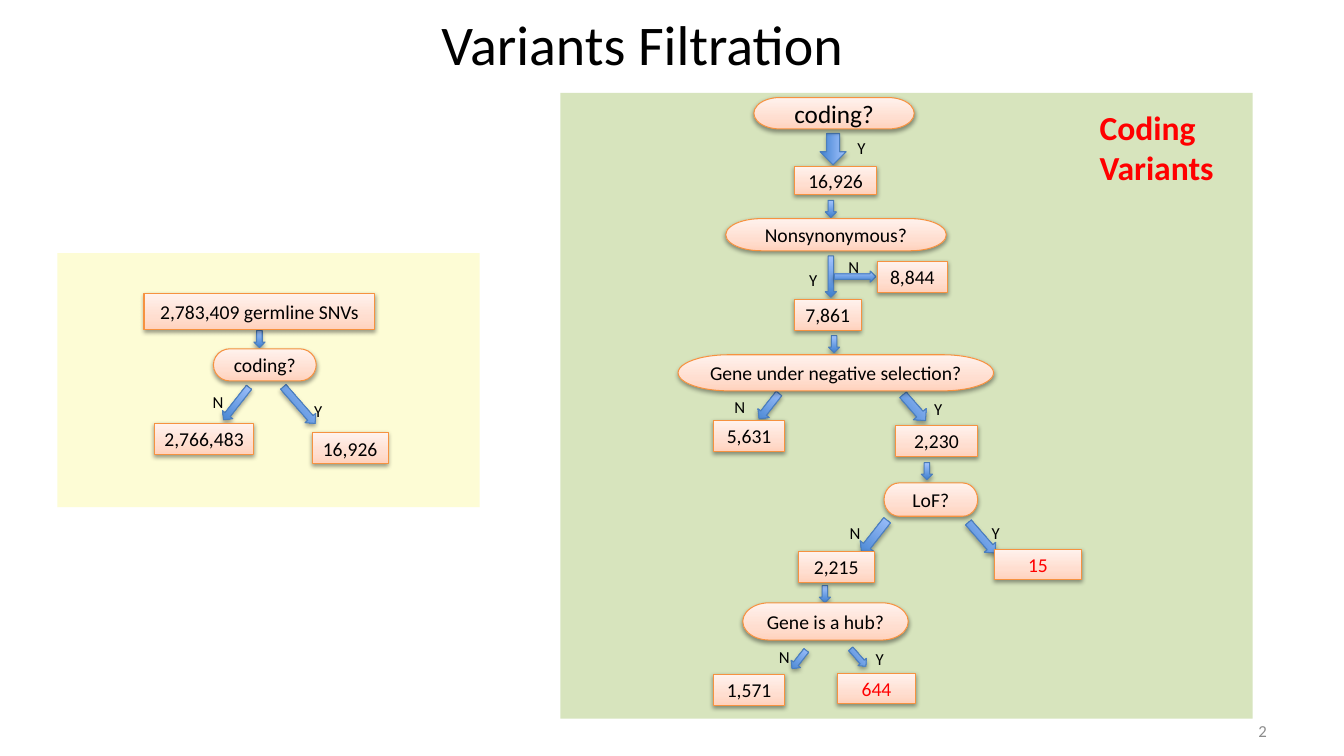
"""Build the variants filtration slide."""
from copy import deepcopy
from dataclasses import dataclass
from typing import NamedTuple

from lxml import etree
from pptx import Presentation
from pptx import util as u
from pptx.dml.color import RGBColor
from pptx.enum import shapes, text
from pptx.oxml import ns

Kind = shapes.MSO_SHAPE
Side = text.PP_ALIGN
Hold = text.MSO_ANCHOR


class Glow(NamedTuple):
    fill: tuple[tuple[float, str], ...]
    line: str
    dark: int
    drop: int


@dataclass(frozen=True)
class Theme:
    font: str = "Calibri"
    black: str = "000000"
    red: str = "FF0000"
    grey: str = "8C8C8C"
    cream: str = "FDFCD5"
    green: str = "D7E4BD"
    title: int = 40
    head: int = 24
    large: int = 18
    body: int = 14
    small: int = 12
    peach: Glow = Glow(((0, "FFD2BD"), (0.35, "FFDED0"), (1, "FFF2ED")), "F69240", 38, 20000)
    blue: Glow = Glow(((0, "3F80CE"), (1, "A4C4FF")), "4B7EBC", 35, 23000)


LOOK = Theme()


class Area(NamedTuple):
    x: float
    y: float
    w: float
    h: float

    def spots(self) -> list[u.Cm]:
        return [u.Cm(v) for v in self]


class Node(NamedTuple):
    words: str
    area: Area
    kind: Kind = Kind.FLOWCHART_PROCESS
    color: str = LOOK.black
    size: int = LOOK.body


class Arrow(NamedTuple):
    area: Area
    kind: Kind = Kind.DOWN_ARROW
    turn: float = 0


class Note(NamedTuple):
    words: str
    area: Area
    size: int = LOOK.small
    color: str = LOOK.black
    bold: bool = False
    side: Side = Side.LEFT
    hold: Hold = Hold.TOP


ROUND = Kind.FLOWCHART_TERMINATOR
RIGHT = Kind.RIGHT_ARROW

PANELS = [
    (Area(1.45, 6.38, 10.64, 6.4), LOOK.cream),
    (Area(14.12, 2.34, 17.45, 15.77), LOOK.green),
]

NODES = [
    Node("2,783,409 germline SNVs", Area(3.63, 7.39, 5.82, 0.91)),
    Node("coding?", Area(5.38, 8.79, 2.59, 0.81), ROUND),
    Node("2,766,483", Area(3.89, 10.67, 2.51, 0.79)),
    Node("16,926", Area(7.87, 10.9, 1.91, 0.79)),
    Node("coding?", Area(19, 2.46, 4.04, 0.79), ROUND, size=LOOK.large),
    Node("16,926", Area(20.02, 4.19, 2.08, 0.71)),
    Node("Nonsynonymous?", Area(18.29, 5.51, 5.56, 0.81), ROUND),
    Node("8,844", Area(22.12, 6.58, 1.75, 0.79)),
    Node("7,861", Area(20.02, 7.54, 1.68, 0.79)),
    Node("Gene under negative selection?", Area(17.09, 8.94, 7.95, 0.91), ROUND),
    Node("5,631", Area(17.98, 10.59, 1.8, 0.79)),
    Node("2,230", Area(22.56, 10.72, 2.08, 0.79)),
    Node("LoF?", Area(22.28, 12.17, 2.36, 0.84), ROUND),
    Node("2,215", Area(20.12, 13.89, 1.91, 0.79)),
    Node("15", Area(25.07, 13.84, 2.18, 0.76), color=LOOK.red),
    Node("Gene is a hub?", Area(18.72, 15.19, 4.17, 0.94), ROUND),
    Node("1,571", Area(17.98, 16.99, 1.8, 0.79)),
    Node("644", Area(21.11, 16.97, 1.96, 0.76), color=LOOK.red),
]

STEPS = [(6.4, 8.33), (20.8, 5.05), (20.88, 8.46), (23.22, 11.66), (20.65, 14.76)]
LEFTS = [
    Area(5.79, 9.65, 0.33, 1.04),
    Area(19.2, 9.83, 0.36, 0.81),
    Area(21.82, 13, 0.43, 1.04),
    Area(19.99, 16.33, 0.3, 0.58),
]
RIGHTS = [
    Area(6.93, 10.03, 1.22, 0.36),
    Area(22.61, 10.06, 0.86, 0.43),
    Area(24.23, 13.36, 1.02, 0.38),
    Area(21.34, 16.43, 0.58, 0.28),
]
ARROWS = [
    *(Arrow(Area(x, y, 0.28, 0.43)) for x, y in STEPS),
    *(Arrow(area, turn=38.1) for area in LEFTS),
    *(Arrow(area, RIGHT, 48.9) for area in RIGHTS),
    Arrow(Area(20.8, 6.45, 0.28, 1.04)),
    Arrow(Area(21.03, 6.83, 1.04, 0.28), RIGHT),
    Arrow(Area(20.6, 3.43, 0.79, 0.66), RIGHT, 90),
]

MARKS = {
    "N": [(5.11, 9.75), (21.13, 6.35), (18.26, 9.88), (21.16, 13.06), (19.38, 16.18)],
    "Y": [(7.67, 9.98), (21.36, 3.35), (20.14, 6.68), (23.29, 9.93), (24.74, 13.06),
          (21.82, 16.23)],
}
NOTES = [
    *(Note(mark, Area(x, y, 0.66, 0.76)) for mark, spots in MARKS.items() for x, y in spots),
    Note("Coding Variants", Area(27.46, 2.57, 4.06, 2.31), LOOK.head, LOOK.red, True),
    Note("2", Area(24.28, 17.91, 7.9, 1.02), color=LOOK.grey, side=Side.RIGHT,
         hold=Hold.MIDDLE),
]


def write(frame, words: str, size: int, color: str, side: Side, hold: Hold,
          bold: bool = False) -> None:
    frame.word_wrap = True
    frame.vertical_anchor = hold
    line = frame.paragraphs[0]
    line.alignment = side
    run = line.add_run()
    run.text = words
    font = run.font
    font.name, font.size, font.bold = LOOK.font, u.Pt(size), bold
    font.color.rgb = RGBColor.from_string(color)


def polish(shape, glow: Glow) -> None:
    fill = shape.fill
    fill.gradient()
    fill.gradient_angle = 90
    stops = shape.element.spPr.find(".//" + ns.qn("a:gsLst"))
    while len(stops) < len(glow.fill):
        stops.append(deepcopy(stops[0]))
    for stop, (place, color) in zip(fill.gradient_stops, glow.fill):
        stop.position = place
        stop.color.rgb = RGBColor.from_string(color)
    shape.line.color.rgb = RGBColor.from_string(glow.line)
    shape.line.width = u.Pt(0.75)
    shape.shadow.inherit = False
    holder = shape.element.spPr.find(ns.qn("a:effectLst"))
    shade = etree.SubElement(holder, ns.qn("a:outerShdw"), blurRad="40000",
                             dist=str(glow.drop), dir="5400000", rotWithShape="0")
    tone = etree.SubElement(shade, ns.qn("a:srgbClr"), val=LOOK.black)
    etree.SubElement(tone, ns.qn("a:alpha"), val=str(glow.dark * 1000))


def draw_panel(slide, area: Area, color: str) -> None:
    panel = slide.shapes.add_shape(Kind.RECTANGLE, *area.spots())
    panel.shadow.inherit = False
    panel.fill.solid()
    panel.fill.fore_color.rgb = RGBColor.from_string(color)
    panel.line.fill.background()


def draw_arrow(slide, arrow: Arrow) -> None:
    shape = slide.shapes.add_shape(arrow.kind, *arrow.area.spots())
    shape.rotation = arrow.turn
    polish(shape, LOOK.blue)


def draw_node(slide, node: Node) -> None:
    shape = slide.shapes.add_shape(node.kind, *node.area.spots())
    polish(shape, LOOK.peach)
    frame = shape.text_frame
    frame.margin_left = frame.margin_right = frame.margin_top = frame.margin_bottom = 0
    write(frame, node.words, node.size, node.color, Side.CENTER, Hold.MIDDLE)


def draw_note(slide, note: Note) -> None:
    box = slide.shapes.add_textbox(*note.area.spots())
    write(box.text_frame, note.words, note.size, note.color, note.side, note.hold, note.bold)


def main() -> None:
    deck = Presentation()
    deck.slide_width, deck.slide_height = u.Cm(33.87), u.Cm(19.05)
    slide = deck.slides.add_slide(deck.slide_layouts[5])
    title = slide.shapes.title
    title.left, title.top, title.width, title.height = Area(0.36, 0.2, 31.65, 1.78).spots()
    write(title.text_frame, "Variants Filtration", LOOK.title, LOOK.black, Side.CENTER,
          Hold.MIDDLE)
    for area, color in PANELS:
        draw_panel(slide, area, color)
    for arrow in ARROWS:
        draw_arrow(slide, arrow)
    for node in NODES:
        draw_node(slide, node)
    for note in NOTES:
        draw_note(slide, note)
    deck.save("out.pptx")


if __name__ == "__main__":
    main()
